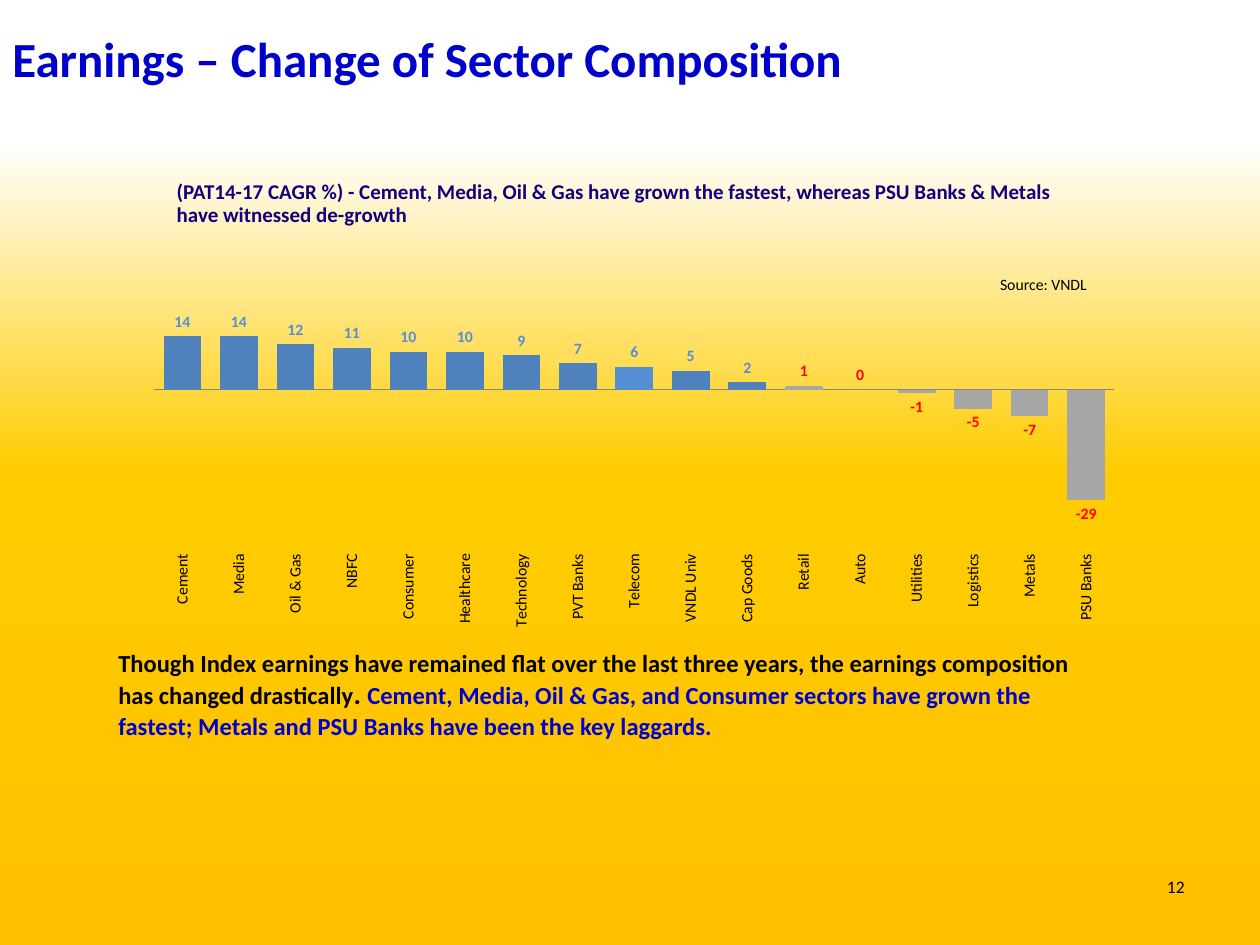
from lxml import etree
from pptx import Presentation
from pptx.chart.data import CategoryChartData
from pptx.dml.color import RGBColor
from pptx.enum.chart import (XL_CHART_TYPE, XL_LABEL_POSITION,
                             XL_TICK_LABEL_POSITION, XL_TICK_MARK)
from pptx.enum.text import MSO_ANCHOR, PP_ALIGN
from pptx.oxml import parse_xml
from pptx.oxml.ns import nsdecls, qn
from pptx.util import Pt

COLUMNS = XL_CHART_TYPE.COLUMN_CLUSTERED
OUTSIDE = XL_LABEL_POSITION.OUTSIDE_END
LABELS_LOW, LABELS_NONE = XL_TICK_LABEL_POSITION.LOW, XL_TICK_LABEL_POSITION.NONE
NO_TICK = XL_TICK_MARK.NONE
LEFT, RIGHT = PP_ALIGN.LEFT, PP_ALIGN.RIGHT
TOP, MIDDLE = MSO_ANCHOR.TOP, MSO_ANCHOR.MIDDLE
PLAIN_TABLE = "{2D5ABB26-0587-4C30-8999-92F81FD0307C}"

COLORS = {
    "text": "000000", "blue": "0000CC", "navy": "14007D", "axis": "868686",
    "bar": "4F81BD", "highlight": "558ED5", "laggard": "A6A6A6", "red": "FF0000",
    "amber": "FFC000", "gold": "FFCC00", "white": "FFFFFF",
}
BACKGROUND_STOPS = [(0, "amber"), (50, "gold"), (85, "white")]
SECTOR_GROWTH = {
    "Cement": 14, "Media": 14, "Oil & Gas": 12, "NBFC": 11, "Consumer": 10,
    "Healthcare": 10, "Technology": 9, "PVT Banks": 7, "Telecom": 6,
    "VNDL Univ": 5, "Cap Goods": 2, "Retail": 1, "Auto": 0, "Utilities": -1,
    "Logistics": -5, "Metals": -7, "PSU Banks": -29,
}
SLOW_GROWTH = 1
HIGHLIGHTED = "Telecom"


def rgb(name):
    return RGBColor.from_string(COLORS[name])


class SlideBuilder:
    font_name = "Calibri"

    def __init__(self, slide):
        self.slide = slide

    def style(self, font, size, color="text", bold=False):
        for key, value in {"name": self.font_name, "size": Pt(size), "bold": bold}.items():
            setattr(font, key, value)
        font.color.rgb = rgb(color)

    def background(self, stops):
        fill = self.slide.background.fill
        fill.gradient()
        gradient = self.slide.background._cSld.find(".//" + qn("a:gradFill"))
        stop_list = gradient.find(qn("a:gsLst"))
        for old_stop in list(stop_list):
            stop_list.remove(old_stop)
        for percent, color in stops:
            stop = etree.SubElement(stop_list, qn("a:gs"), pos=str(percent * 1000))
            etree.SubElement(stop, qn("a:srgbClr"), val=COLORS[color])
        fill.gradient_angle = 90

    def add_runs(self, paragraph, runs, align=LEFT):
        paragraph.alignment = align
        for text, *style in runs:
            run = paragraph.add_run()
            run.text = text
            self.style(run.font, *style)

    def text(self, box, runs, align=LEFT, anchor=TOP):
        frame = self.slide.shapes.add_textbox(*map(Pt, box)).text_frame
        frame.word_wrap = True
        frame.vertical_anchor = anchor
        self.add_runs(frame.paragraphs[0], runs, align)

    def table(self, box, rows):
        """Each row is (height, runs, alignment)."""
        table = self.slide.shapes.add_table(len(rows), 1, *map(Pt, box)).table
        table.first_row = table.horz_banding = False
        table._tbl.tblPr.find(qn("a:tableStyleId")).text = PLAIN_TABLE
        for index, (height, runs, align) in enumerate(rows):
            table.rows[index].height = Pt(height)
            cell = table.cell(index, 0)
            cell.fill.background()
            for side in ("left", "top", "right", "bottom"):
                setattr(cell, f"margin_{side}", 0)
            paragraph = cell.text_frame.paragraphs[0]
            paragraph.line_spacing = Pt(13 if align == LEFT else 12)
            self.add_runs(paragraph, runs, align)

    def column_chart(self, box, values, plot):
        data = CategoryChartData(number_format="0")
        data.categories = list(values)
        data.add_series("Series 1", list(values.values()))
        chart = self.slide.shapes.add_chart(COLUMNS, *map(Pt, box), data).chart
        chart.has_legend = chart.has_title = False
        self.style(chart.font, 9)

        # Plot area
        area = chart._chartSpace.chart.plotArea
        for old_layout in area.findall(qn("c:layout")):
            area.remove(old_layout)
        sizes = "".join(f'<c:{key} val="{value}"/>' for key, value in zip("xywh", plot))
        area.insert(0, parse_xml(
            f'<c:layout {nsdecls("c")}><c:manualLayout><c:layoutTarget val="inner"/>'
            f'<c:xMode val="edge"/><c:yMode val="edge"/>{sizes}'
            '</c:manualLayout></c:layout>'))

        # Axes
        sectors, growth = chart.category_axis, chart.value_axis
        for axis, position in ((sectors, LABELS_LOW), (growth, LABELS_NONE)):
            axis.major_tick_mark = axis.minor_tick_mark = NO_TICK
            axis.has_major_gridlines = False
            axis.tick_label_position = position
        growth.minimum_scale, growth.maximum_scale = -40, 20
        growth.format.line.fill.background()
        sectors.format.line.color.rgb = rgb("axis")
        sectors.format.line.width = Pt(0.75)
        self.style(sectors.tick_labels.font, 9)
        text_body = sectors._element.find(qn("c:txPr")).find(qn("a:bodyPr"))
        text_body.set("rot", "-5400000")
        text_body.set("vert", "horz")

        # Columns and their labels
        bars = chart.plots[0]
        bars.gap_width, bars.vary_by_categories = 50, False
        series = bars.series[0]
        series.invert_if_negative = False
        series.format.fill.solid()
        series.format.fill.fore_color.rgb = rgb("bar")
        for index, (sector, value) in enumerate(values.items()):
            slow = value <= SLOW_GROWTH
            point = series.points[index]
            if slow or sector == HIGHLIGHTED:
                point.format.fill.solid()
                point.format.fill.fore_color.rgb = rgb("laggard" if slow else "highlight")
            self.style(point.data_label.font, 9, "red" if slow else "highlight", True)
            point.data_label.position = OUTSIDE


def main():
    deck = Presentation()
    deck.slide_width, deck.slide_height = Pt(720), Pt(540)
    page = SlideBuilder(deck.slides.add_slide(deck.slide_layouts[6]))
    page.background(BACKGROUND_STOPS)

    # Page number and title
    page.text((516, 492, 168, 29), [("12", 10)], RIGHT, MIDDLE)
    page.text((0, 13, 518, 41),
              [("Earnings – Change of Sector Composition", 28, "blue", True)])

    # Chart heading and source
    heading = ("(PAT14-17 CAGR %) - Cement, Media, Oil & Gas have grown the fastest, "
               "whereas PSU Banks & Metals have witnessed de-growth")
    page.table((101, 104.4, 520, 64), [
        (26, [(heading, 12, "navy", True)], LEFT),
        (26, [], LEFT),
        (12, [("Source: VNDL", 9)], RIGHT),
    ])

    # Growth by sector
    page.column_chart((84.2, 162, 559.4, 209.5), SECTOR_GROWTH, (0.007, 0.082, 0.981, 0.622))

    # Takeaway
    page.text((60.5, 366.5, 577.5, 60.5), [
        ("Though Index earnings have remained flat over the last three years, "
         "the earnings composition has changed drastically", 14, "text", True),
        (". ", 16, "text", True),
        ("Cement, Media, Oil & Gas, and Consumer sectors have grown the fastest; "
         "Metals and PSU Banks have been the key laggards.", 14, "blue", True),
    ])
    deck.save("out.pptx")


if __name__ == "__main__":
    main()
